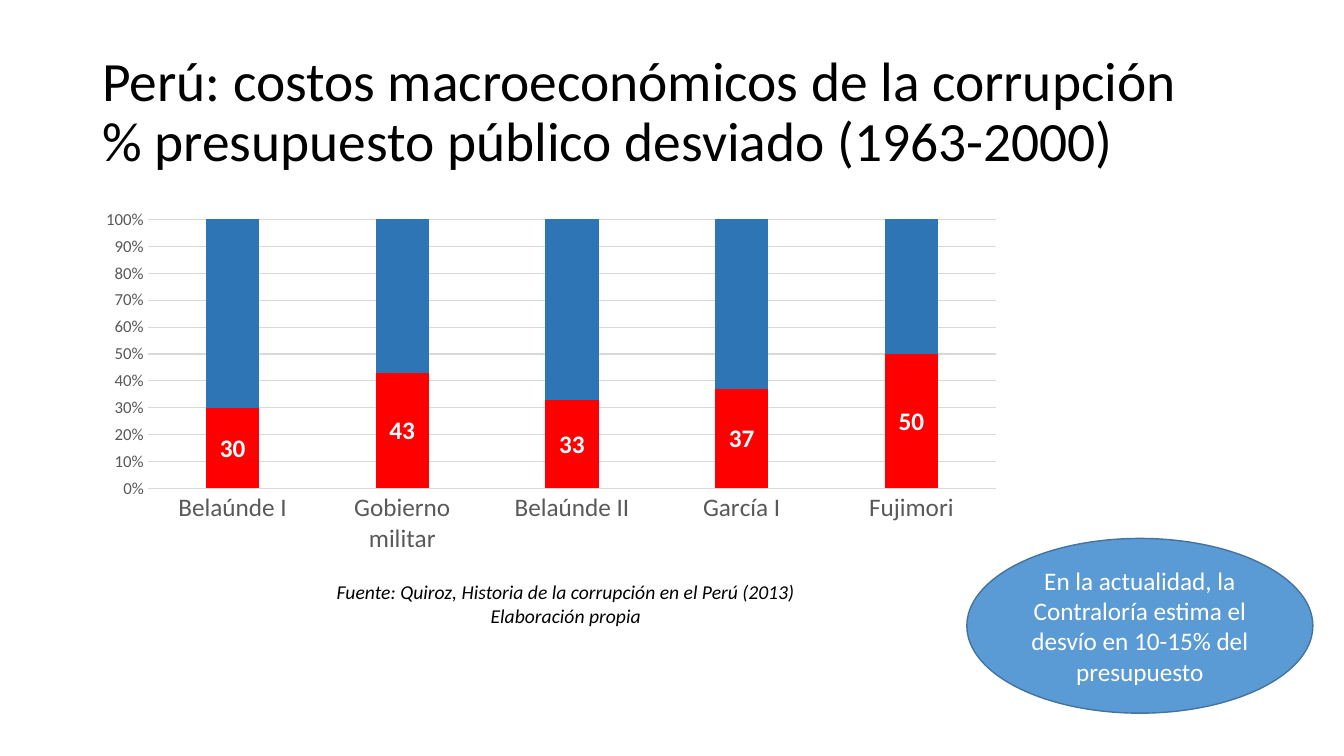
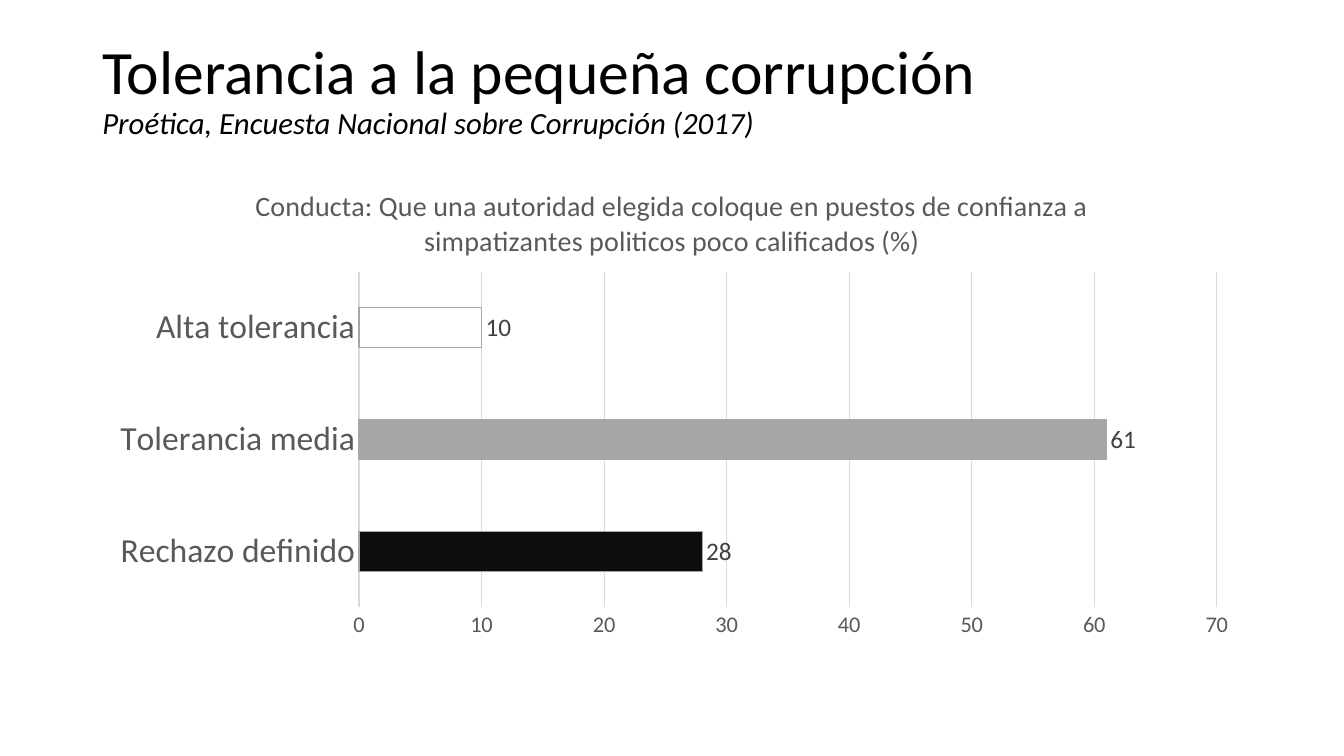
from dataclasses import dataclass

from lxml import etree
from pptx import Presentation
from pptx.chart.data import CategoryChartData
from pptx.dml.color import RGBColor
from pptx.enum.chart import XL_CHART_TYPE, XL_LABEL_POSITION, XL_TICK_MARK
from pptx.enum.shapes import MSO_SHAPE
from pptx.enum.text import MSO_ANCHOR, PP_ALIGN
from pptx.oxml.ns import qn
from pptx.util import Inches, Pt

STACKED = XL_CHART_TYPE.COLUMN_STACKED_100
BARS = XL_CHART_TYPE.BAR_CLUSTERED
LABEL_CENTER = XL_LABEL_POSITION.CENTER
LABEL_OUTSIDE = XL_LABEL_POSITION.OUTSIDE_END
NO_TICK = XL_TICK_MARK.NONE
ELLIPSE = MSO_SHAPE.OVAL
MIDDLE = MSO_ANCHOR.MIDDLE
TOP = MSO_ANCHOR.TOP
CENTER = PP_ALIGN.CENTER

COLUMNS, ROWS = 160, 90
MARGIN, CONTENT_WIDTH = 11, 138


@dataclass(frozen=True)
class Theme:
    font: str = "Calibri"
    text: str = "000000"
    muted: str = "595959"
    label: str = "404040"
    white: str = "FFFFFF"
    rule: str = "D9D9D9"
    diverted: str = "FF0000"
    remaining: str = "2E75B6"
    accent: str = "5B9BD5"
    accent_edge: str = "43739E"
    gray: str = "A6A6A6"
    dark: str = "0D0D0D"
    title: float = 44
    long_title: float = 39.6
    subtitle: float = 22
    chart_title: float = 20
    body: float = 18
    source: float = 14
    chart_base: float = 10


class Deck:
    def __init__(self, theme):
        self.theme = theme
        self.file = Presentation()
        self.file.slide_width = Inches(13.33)
        self.file.slide_height = Inches(7.5)
        self.slide = None

    def new_slide(self):
        self.slide = self.file.slides.add_slide(self.file.slide_layouts[6])

    def place(self, column, row, columns, rows):
        unit_x = self.file.slide_width / COLUMNS
        unit_y = self.file.slide_height / ROWS
        return (round(column * unit_x), round(row * unit_y),
                round(columns * unit_x), round(rows * unit_y))

    def style(self, font, size, color, bold=False, italic=False):
        font.name = self.theme.font
        font.size = Pt(size)
        font.bold = bold
        font.italic = italic
        font.color.rgb = RGBColor.from_string(color)

    def paint(self, target, fill, edge=None, width=0.75):
        target.fill.solid()
        target.fill.fore_color.rgb = RGBColor.from_string(fill)
        if edge:
            self.rule(target.line, edge, width)

    def rule(self, line, color, width=0.75):
        line.color.rgb = RGBColor.from_string(color)
        line.width = Pt(width)

    def add_run(self, paragraph, text, size, color, italic=False):
        run = paragraph.add_run()
        run.text = text
        self.style(run.font, size, color, italic=italic)

    def set_frame(self, frame, anchor):
        frame.word_wrap = True
        frame.vertical_anchor = anchor

    def centered_lines(self, frame, lines, size, color, anchor, italic=False):
        self.set_frame(frame, anchor)
        for index, text in enumerate(lines):
            paragraph = frame.add_paragraph() if index else frame.paragraphs[0]
            paragraph.alignment = CENTER
            self.add_run(paragraph, text, size, color, italic)

    def title(self, row, lines):
        frame = self.slide.shapes.add_textbox(
            *self.place(MARGIN, row, CONTENT_WIDTH, 17.4)).text_frame
        self.set_frame(frame, MIDDLE)
        heading = frame.paragraphs[0]
        heading.line_spacing = 0.9
        for index, (text, size, italic) in enumerate(lines):
            if index:
                heading.add_line_break()
            self.add_run(heading, text, size, self.theme.text, italic)

    def source(self, area, lines):
        frame = self.slide.shapes.add_textbox(*self.place(*area)).text_frame
        self.centered_lines(frame, lines, self.theme.source, self.theme.text,
                            TOP, italic=True)

    def callout(self, area, text):
        bubble = self.slide.shapes.add_shape(ELLIPSE, *self.place(*area))
        bubble.shadow.inherit = False
        self.paint(bubble, self.theme.accent, self.theme.accent_edge, 1)
        self.centered_lines(bubble.text_frame, [text], self.theme.body,
                            self.theme.white, MIDDLE)

    def chart(self, kind, area, categories, series, gap, plot_area, axis_sizes):
        data = CategoryChartData()
        data.categories = categories
        for name, values, _ in series:
            data.add_series(name, values)
        chart = self.slide.shapes.add_chart(kind, *self.place(*area), data).chart
        chart.has_legend = False
        chart.has_title = False
        self.style(chart.font, self.theme.chart_base, self.theme.text)
        plot = chart.plots[0]
        plot.gap_width = gap
        plot.vary_by_categories = False
        for bars, (_, _, color) in zip(plot.series, series):
            self.paint(bars.format, color)
            bars.invert_if_negative = False
        axes = chart.category_axis, chart.value_axis
        for axis, size in zip(axes, axis_sizes):
            axis.major_tick_mark = axis.minor_tick_mark = NO_TICK
            self.style(axis.tick_labels.font, size, self.theme.muted)
        self.rule(chart.category_axis.format.line, self.theme.rule)
        chart.value_axis.format.line.fill.background()
        chart.value_axis.has_major_gridlines = True
        self.rule(chart.value_axis.major_gridlines.format.line, self.theme.rule)
        self.fix_plot_area(chart, plot_area)
        return chart

    def fix_plot_area(self, chart, shares):
        area = chart.element.find(".//" + qn("c:plotArea"))
        for old in area.findall(qn("c:layout")):
            area.remove(old)
        layout = etree.Element(qn("c:layout"))
        area.insert(0, layout)
        manual = etree.SubElement(layout, qn("c:manualLayout"))
        settings = [("layoutTarget", "inner"), ("xMode", "edge"), ("yMode", "edge")]
        for tag, value in settings + list(zip("xywh", shares)):
            etree.SubElement(manual, qn("c:" + tag)).set("val", str(value))

    def chart_title(self, chart, text):
        chart.has_title = True
        self.add_run(chart.chart_title.text_frame.paragraphs[0], text,
                     self.theme.chart_title, self.theme.muted)

    def value_labels(self, bars, color, position, bold=False):
        labels = bars.data_labels
        labels.show_value = True
        labels.position = position
        self.style(labels.font, self.theme.body, color, bold)


def budget_slide(deck):
    theme = deck.theme
    deck.new_slide()
    deck.title(4.8, [
        ("Perú: costos macroeconómicos de la corrupción", theme.long_title, False),
        ("% presupuesto público desviado (1963-2000)", theme.long_title, False),
    ])
    diverted = [30, 43, 33, 37, 50]
    chart = deck.chart(
        STACKED, (MARGIN, 24, 109.8, 42.7),
        ["Belaúnde I", "Gobierno militar", "Belaúnde II", "García I", "Fujimori"],
        [("Series 1", diverted, theme.diverted),
         ("Series 2", [100 - share for share in diverted], theme.remaining)],
        gap=219, plot_area=(0.06, 0.05, 0.92, 0.75), axis_sizes=(18, 12))
    chart.plots[0].overlap = 100
    chart.value_axis.tick_labels.number_format = "0%"
    chart.value_axis.tick_labels.number_format_is_linked = False
    deck.value_labels(chart.plots[0].series[0], theme.white, LABEL_CENTER, bold=True)
    deck.source((37.7, 68.5, 59.3, 6.8), [
        "Fuente: Quiroz, Historia de la corrupción en el Perú (2013)",
        "Elaboración propia",
    ])
    deck.callout(
        (115.1, 64.1, 41.2, 20.8),
        "En la actualidad, la Contraloría estima el desvío en 10-15% del presupuesto")


def tolerance_slide(deck):
    theme = deck.theme
    deck.new_slide()
    deck.title(2.2, [
        ("Tolerancia a la pequeña corrupción", theme.title, False),
        ("Proética, Encuesta Nacional sobre Corrupción (2017)", theme.subtitle, True),
    ])
    chart = deck.chart(
        BARS, (MARGIN, 19.8, CONTENT_WIDTH, 57.1),
        ["Rechazo definido", "Tolerancia media", "Alta tolerancia"],
        [("Series 1", [28, 61, 10], theme.accent)],
        gap=182, plot_area=(0.23, 0.22, 0.74, 0.7), axis_sizes=(24, 16))
    deck.chart_title(
        chart,
        "Conducta: Que una autoridad elegida coloque en puestos de confianza a "
        "simpatizantes politicos poco calificados (%)")
    chart.value_axis.minimum_scale = 0
    chart.value_axis.maximum_scale = 70
    chart.value_axis.major_unit = 10
    answers = chart.plots[0].series[0]
    for index, color in enumerate([theme.dark, theme.gray, theme.white]):
        deck.paint(answers.points[index].format, color, theme.gray)
    deck.value_labels(answers, theme.label, LABEL_OUTSIDE)


def main():
    deck = Deck(Theme())
    budget_slide(deck)
    tolerance_slide(deck)
    deck.file.save("out.pptx")


if __name__ == "__main__":
    main()
